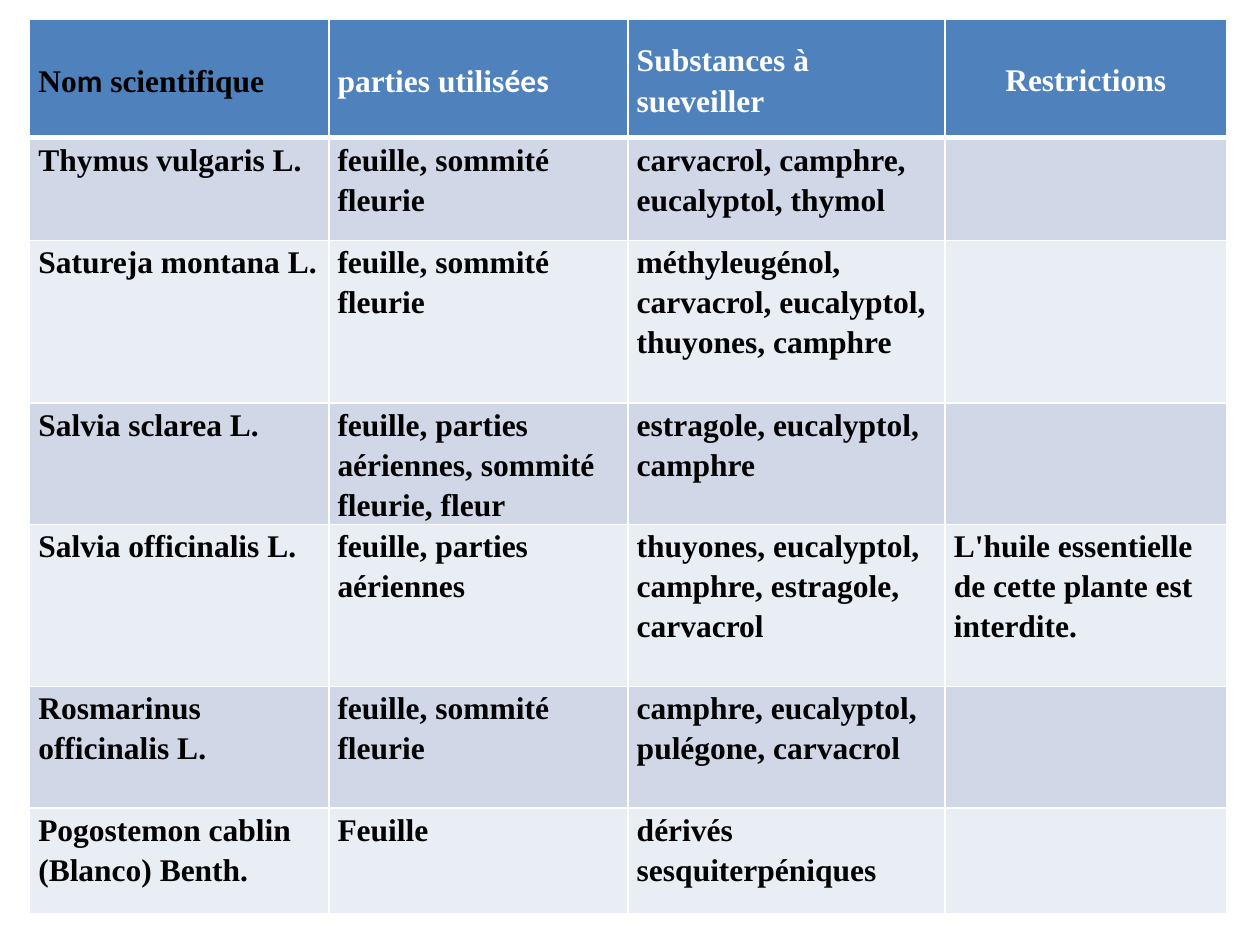
from lxml import etree
from pptx import Presentation
from pptx.dml.color import RGBColor
from pptx.enum.text import MSO_ANCHOR, PP_ALIGN
from pptx.oxml.ns import qn
from pptx.util import Pt

MIDDLE, TOP = MSO_ANCHOR.MIDDLE, MSO_ANCHOR.TOP
LEFT, CENTER = PP_ALIGN.LEFT, PP_ALIGN.CENTER
SERIF, SANS = "Times New Roman", "Calibri"
COLORS = {"head": "4F81BD", "odd": "D0D8E8", "even": "E9EDF4",
          "white": "FFFFFF", "black": "000000"}
INSETS = {"margin_left": Pt(5), "margin_right": Pt(5),
          "margin_top": Pt(0), "margin_bottom": Pt(0)}
COLS = [171, 171, 181.2, 160.8]
ROWS = [67.5, 58.7, 92.9, 69.4, 92.6, 69.4, 60.6]
HEAD = [
    [("No", SERIF), ("m", SANS), (" scientifique", SERIF)],
    [("parties utilis", SERIF), ("ées", SANS)],
    [("Substances à sueveiller", SERIF)],
    [("Restrictions", SERIF)],
]
PLANTS = [
    ("Thymus vulgaris L.", "feuille, sommité fleurie",
     "carvacrol, camphre, eucalyptol, thymol", ""),
    ("Satureja montana L.", "feuille, sommité fleurie",
     "méthyleugénol, carvacrol, eucalyptol, thuyones, camphre", ""),
    ("Salvia sclarea L.", "feuille, parties aériennes, sommité fleurie, fleur",
     "estragole, eucalyptol, camphre", ""),
    ("Salvia officinalis L.", "feuille, parties aériennes",
     "thuyones, eucalyptol, camphre, estragole, carvacrol",
     "L'huile essentielle de cette plante est interdite."),
    ("Rosmarinus officinalis L.", "feuille, sommité fleurie",
     "camphre, eucalyptol, pulégone, carvacrol", ""),
    ("Pogostemon cablin (Blanco) Benth.", "Feuille",
     "dérivés sesquiterpéniques", ""),
]


def set_attrs(item, values):
    """Set each named value on an object."""
    for name, value in values.items():
        setattr(item, name, value)


def add_edges(cell, widths):
    """Draw white borders of the given widths on a cell."""
    props = cell._tc.get_or_add_tcPr()
    for side, width in widths.items():
        line = etree.SubElement(props, qn(f"a:ln{side}"), w=str(Pt(width)))
        fill = etree.SubElement(line, qn("a:solidFill"))
        etree.SubElement(fill, qn("a:srgbClr"), val=COLORS["white"])


def fill_cell(cell, runs, fill, ink, anchor, align, edges):
    """Style one cell and write its runs."""
    add_edges(cell, edges)
    cell.fill.solid()
    cell.fill.fore_color.rgb = RGBColor.from_string(COLORS[fill])
    set_attrs(cell, {**INSETS, "vertical_anchor": anchor})
    para = cell.text_frame.paragraphs[0]
    set_attrs(para, {"line_spacing": 1.15, "alignment": align})
    for text, font in runs:
        run = para.add_run()
        run.text = text
        set_attrs(run.font, {"name": font, "size": Pt(18), "bold": True})
        run.font.color.rgb = RGBColor.from_string(COLORS[ink])


def add_plants(slide, left, top):
    """Place the plant table with its top left corner at the given point."""
    table = slide.shapes.add_table(
        len(ROWS), len(COLS), Pt(left), Pt(top),
        Pt(sum(COLS)), Pt(sum(ROWS))).table
    for col, width in zip(table.columns, COLS):
        col.width = Pt(width)
    for row, height in zip(table.rows, ROWS):
        row.height = Pt(height)
    for c, runs in enumerate(HEAD):
        fill_cell(table.cell(0, c), runs, "head", "white" if c else "black",
                  MIDDLE, CENTER if c == 3 else LEFT,
                  {"L": 1, "R": 1, "T": 1, "B": 3})
    for r, plant in enumerate(PLANTS, 1):
        for c, text in enumerate(plant):
            fill_cell(table.cell(r, c), [(text, SERIF)] if text else [],
                      "odd" if r % 2 else "even", "black", TOP, LEFT,
                      {"L": 1, "R": 1, "T": 3 if r == 1 else 1, "B": 1})


def main():
    """Build and save the slide."""
    deck = Presentation()
    set_attrs(deck, {"slide_width": Pt(720), "slide_height": Pt(540)})
    slide = deck.slides.add_slide(deck.slide_layouts[6])
    add_plants(slide, 16.9, 11.2)
    deck.save("out.pptx")


if __name__ == "__main__":
    main()
